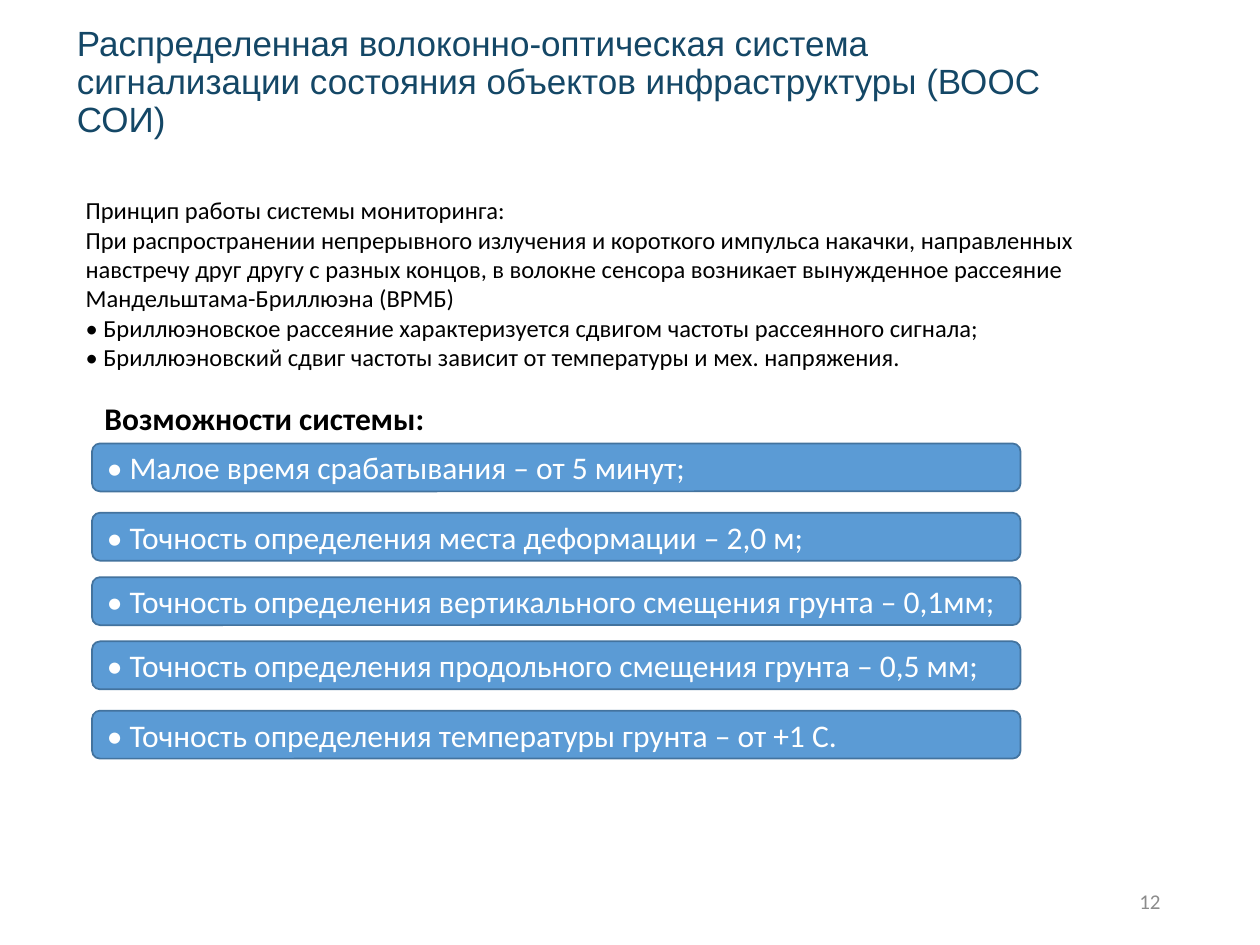
from pptx import Presentation
from pptx.dml.color import RGBColor
from pptx.enum.shapes import MSO_SHAPE
from pptx.enum.text import MSO_ANCHOR, MSO_AUTO_SIZE, PP_ALIGN
from pptx.util import Pt

ROUNDED = MSO_SHAPE.ROUNDED_RECTANGLE
TOP, MIDDLE = MSO_ANCHOR.TOP, MSO_ANCHOR.MIDDLE
LEFT, RIGHT = PP_ALIGN.LEFT, PP_ALIGN.RIGHT
NO_FIT = MSO_AUTO_SIZE.NONE
TITLE_ONLY = 5

PRINCIPLE = [
    "Принцип работы системы мониторинга:",
    "При распространении непрерывного излучения и короткого импульса накачки, "
    "направленных навстречу друг другу с разных концов, в волокне сенсора возникает "
    "вынужденное рассеяние Мандельштама-Бриллюэна (ВРМБ)",
    "• Бриллюэновское рассеяние характеризуется сдвигом частоты рассеянного сигнала;",
    "• Бриллюэновский сдвиг частоты зависит от температуры и мех. напряжения.",
]
# Top edge and wording of each capability bar
CAPABILITIES = [
    (253.4, "• Малое время срабатывания – от 5 минут;"),
    (293, "• Точность определения места деформации – 2,0 м;"),
    (329.8, "• Точность определения вертикального смещения грунта – 0,1мм;"),
    (366.5, "• Точность определения продольного смещения грунта – 0,5 мм;"),
    (406.1, "• Точность определения температуры грунта – от +1 С."),
]


def color(value):
    return RGBColor.from_string(value)


class SlideBuilder:
    """Holds the style and the current slide."""

    heading_font, body_font = "Arial", "Calibri"
    title_color, text_color, number_color = "144766", "000000", "8C8C8C"
    bar_fill, bar_line, bar_text = "5B9BD5", "43739E", "FFFFFF"

    def __init__(self, page):
        self.page = page

    def fill_text(self, shape, lines, size, ink, font=body_font, bold=False,
                  align=LEFT, anchor=TOP, spacing=1.0):
        frame = shape.text_frame
        frame.word_wrap = True
        frame.auto_size = NO_FIT
        frame.vertical_anchor = anchor
        for index, line in enumerate(lines):
            para = frame.add_paragraph() if index else frame.paragraphs[0]
            para.alignment = align
            para.line_spacing = spacing
            span = para.add_run()
            span.text = line
            span.font.name = font
            span.font.size = Pt(size)
            span.font.bold = bold
            span.font.color.rgb = color(ink)

    def title(self, text, left, top, width, height):
        shape = self.page.shapes.title
        shape.left, shape.top = Pt(left), Pt(top)
        shape.width, shape.height = Pt(width), Pt(height)
        self.fill_text(shape, [text], 20, self.title_color, self.heading_font,
                       anchor=MIDDLE, spacing=0.9)

    def text(self, lines, left, top, width, height, size, ink=text_color, **style):
        box = self.page.shapes.add_textbox(Pt(left), Pt(top), Pt(width), Pt(height))
        self.fill_text(box, lines, size, ink, **style)

    def bar(self, text, left, top, width, height):
        shape = self.page.shapes.add_shape(ROUNDED, Pt(left), Pt(top), Pt(width), Pt(height))
        shape.shadow.inherit = False
        shape.fill.solid()
        shape.fill.fore_color.rgb = color(self.bar_fill)
        shape.line.color.rgb = color(self.bar_line)
        shape.line.width = Pt(1)
        self.fill_text(shape, [text], 18, self.bar_text, anchor=MIDDLE)


def main():
    deck = Presentation()
    deck.slide_width, deck.slide_height = Pt(720), Pt(540)
    builder = SlideBuilder(deck.slides.add_slide(deck.slide_layouts[TITLE_ONLY]))

    # Title and page number
    builder.title("Распределенная волоконно-оптическая система сигнализации "
                  "состояния объектов инфраструктуры (ВООС СОИ)", 36.7, 21.6, 589, 51.8)
    builder.text(["12"], 508.3, 500.4, 162, 28.8, 12, builder.number_color,
                 align=RIGHT, anchor=MIDDLE)

    # Operating principle
    builder.text(PRINCIPLE, 41.8, 108, 583.9, 108.7, 14)

    # System capabilities
    builder.text(["Возможности системы:"], 52.6, 224.6, 399.6, 28.8, 18, bold=True)
    for top, text in CAPABILITIES:
        builder.bar(text, 52.6, top, 530.6, 27.4)

    deck.save("out.pptx")


if __name__ == "__main__":
    main()
